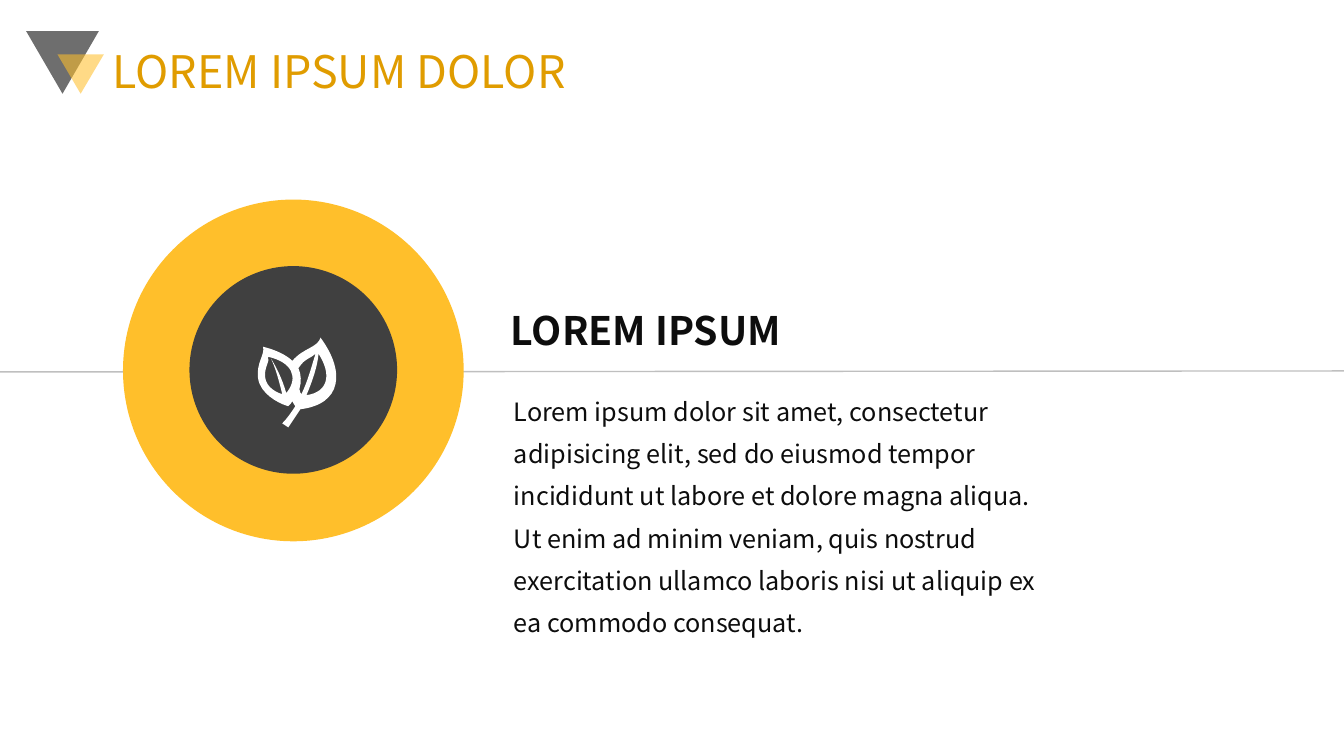
from typing import NamedTuple

from lxml.etree import SubElement
from pptx import Presentation
from pptx.dml.color import RGBColor
from pptx.enum.shapes import MSO_CONNECTOR, MSO_SHAPE
from pptx.enum.text import MSO_ANCHOR as Anchor
from pptx.oxml.ns import qn
from pptx.util import Inches, Pt

FONT = "Noto Sans CJK JP"
GOLD, INK, WHITE = "FFBF2B", "0D0D0D", "FFFFFF"
SLIDE_WIDTH, SLIDE_HEIGHT = 40 / 3, 7.5

Point = tuple[float, float]


class Box(NamedTuple):
    left: float
    top: float
    width: float
    height: float


class Figure(NamedTuple):
    preset: MSO_SHAPE
    box: Box
    color: str
    rotation: int = 0
    opacity: int = 100


class Caption(NamedTuple):
    words: str
    box: Box
    size: int
    color: str
    spacing: float
    anchor: Anchor = Anchor.MIDDLE
    bold: bool = False


TRIANGLES = [
    Figure(MSO_SHAPE.ISOSCELES_TRIANGLE, Box(0.26, 0.31, 0.72, 0.62), "000000", 180, 57),
    Figure(MSO_SHAPE.ISOSCELES_TRIANGLE, Box(0.57, 0.54, 0.46, 0.39), GOLD, 180, 57),
]
DISCS = [
    Figure(MSO_SHAPE.FLOWCHART_CONNECTOR, Box(1.22, 1.98, 3.38, 3.39), GOLD),
    Figure(MSO_SHAPE.FLOWCHART_CONNECTOR, Box(1.88, 2.64, 2.06, 2.06), "404040"),
]
CAPTIONS = [
    Caption(
        "Lorem ipsum dolor sit amet, consectetur adipisicing elit, sed do eiusmod "
        "tempor incididunt ut labore et dolore magna aliqua. Ut enim ad minim veniam, "
        "quis nostrud exercitation ullamco laboris nisi ut aliquip ex ea commodo consequat.",
        Box(5, 3.76, 5.49, 2.59), 18, INK, 1.4, Anchor.TOP),
    Caption("LOREM IPSUM DOLOR", Box(1.02, 0.31, 11.5, 0.85), 32, "E09C00", 0.9),
    Caption("LOREM IPSUM", Box(4.97, 2.71, 4.57, 1.03), 28, INK, 1.2, bold=True),
]

# Each contour: a start point, then three points for every Bezier curve
LEAF_CONTOURS: list[list[Point]] = [
    [  # both leaves and the stem
        (2.93, 4.03),
        (2.92, 4.02), (2.91, 4.0), (2.9, 3.98),
        (2.89, 3.99), (2.89, 4.0), (2.88, 4.01),
        (2.86, 4.03), (2.86, 4.03), (2.86, 4.03),
        (2.83, 4.02), (2.83, 4.02), (2.83, 4.02),
        (2.77, 4.0), (2.58, 3.91), (2.56, 3.75),
        (2.54, 3.6), (2.63, 3.52), (2.61, 3.44),
        (2.73, 3.47), (2.84, 3.52), (2.9, 3.58),
        (3.01, 3.45), (3.15, 3.45), (3.18, 3.35),
        (3.43, 3.69), (3.39, 4.01), (2.98, 4.06),
        (2.94, 4.12), (2.9, 4.18), (2.86, 4.24),
        (2.8, 4.2), (2.8, 4.2), (2.8, 4.2),
        (2.85, 4.15), (2.89, 4.09), (2.93, 4.03),
    ],
    [  # right leaf, inner side
        (2.97, 3.86),
        (2.98, 3.89), (2.98, 3.91), (2.99, 3.91),
        (3.05, 3.79), (3.09, 3.64), (3.13, 3.51),
        (3.09, 3.55), (3.02, 3.56), (2.97, 3.64),
        (2.97, 3.64), (2.96, 3.64), (2.96, 3.65),
        (2.99, 3.72), (2.99, 3.79), (2.97, 3.86),
    ],
    [  # left leaf
        (2.8, 3.91),
        (2.77, 3.79), (2.74, 3.67), (2.69, 3.56),
        (2.69, 3.56), (2.69, 3.56), (2.69, 3.56),
        (2.74, 3.64), (2.8, 3.76), (2.84, 3.9),
        (2.97, 3.74), (2.89, 3.59), (2.66, 3.54),
        (2.68, 3.59), (2.62, 3.64), (2.63, 3.74),
        (2.64, 3.85), (2.76, 3.9), (2.8, 3.91),
    ],
    [  # right leaf, outer side
        (3.04, 3.92),
        (3.26, 3.89), (3.29, 3.71), (3.16, 3.51),
        (3.15, 3.63), (3.1, 3.78), (3.04, 3.92),
    ],
]


def rgb(color: str) -> RGBColor:
    return RGBColor.from_string(color)


def paint(shape, color: str, opacity: int = 100) -> None:
    shape.shadow.inherit = False
    shape.line.fill.background()
    shape.fill.solid()
    shape.fill.fore_color.rgb = rgb(color)
    if opacity < 100:
        tint = shape.fill._xPr.find(qn("a:solidFill"))[0]
        SubElement(tint, qn("a:alpha")).set("val", str(opacity * 1000))


def draw_figure(slide, figure: Figure) -> None:
    shape = slide.shapes.add_shape(figure.preset, *map(Inches, figure.box))
    shape.rotation = figure.rotation
    paint(shape, figure.color, figure.opacity)


def draw_rule(slide, start: Point, end: Point) -> None:
    rule = slide.shapes.add_connector(MSO_CONNECTOR.STRAIGHT, *map(Inches, start + end))
    rule.line.color.rgb = rgb("BFBFBF")
    rule.line.width = Pt(1)
    SubElement(rule._element.spPr, qn("a:effectLst"))


def bend(shape) -> None:
    """Turn every three line segments into one Bezier curve."""
    segments = list(shape._element.iter(qn("a:lnTo")))
    for first, second, third in zip(*[iter(segments)] * 3):
        first.tag = qn("a:cubicBezTo")
        for segment in (second, third):
            first.append(segment[0])
            segment.getparent().remove(segment)


def draw_leaves(slide) -> None:
    contours = [[(Inches(x), Inches(y)) for x, y in contour] for contour in LEAF_CONTOURS]
    builder = slide.shapes.build_freeform(*contours[0][0])
    for number, (start, *curves) in enumerate(contours):
        if number:
            builder.move_to(*start)
        builder.add_line_segments(curves, close=True)
    leaves = builder.convert_to_shape()
    bend(leaves)
    paint(leaves, WHITE)


def write_caption(slide, caption: Caption) -> None:
    frame = slide.shapes.add_textbox(*map(Inches, caption.box)).text_frame
    frame.word_wrap = True
    frame.vertical_anchor = caption.anchor
    frame.text = caption.words
    paragraph = frame.paragraphs[0]
    paragraph.line_spacing = caption.spacing
    font = paragraph.runs[0].font
    font.name, font.size, font.bold = FONT, Pt(caption.size), caption.bold
    font.color.rgb = rgb(caption.color)


def main() -> None:
    deck = Presentation()
    deck.slide_width, deck.slide_height = Inches(SLIDE_WIDTH), Inches(SLIDE_HEIGHT)
    slide = deck.slides.add_slide(deck.slide_layouts[6])

    # Title ornament, then the rule that runs behind the badge
    for triangle in TRIANGLES:
        draw_figure(slide, triangle)
    draw_rule(slide, (0, 3.69), (SLIDE_WIDTH, 3.68))

    # Badge with leaves
    for disc in DISCS:
        draw_figure(slide, disc)
    draw_leaves(slide)

    # Texts
    for caption in CAPTIONS:
        write_caption(slide, caption)

    deck.save("out.pptx")


if __name__ == "__main__":
    main()
